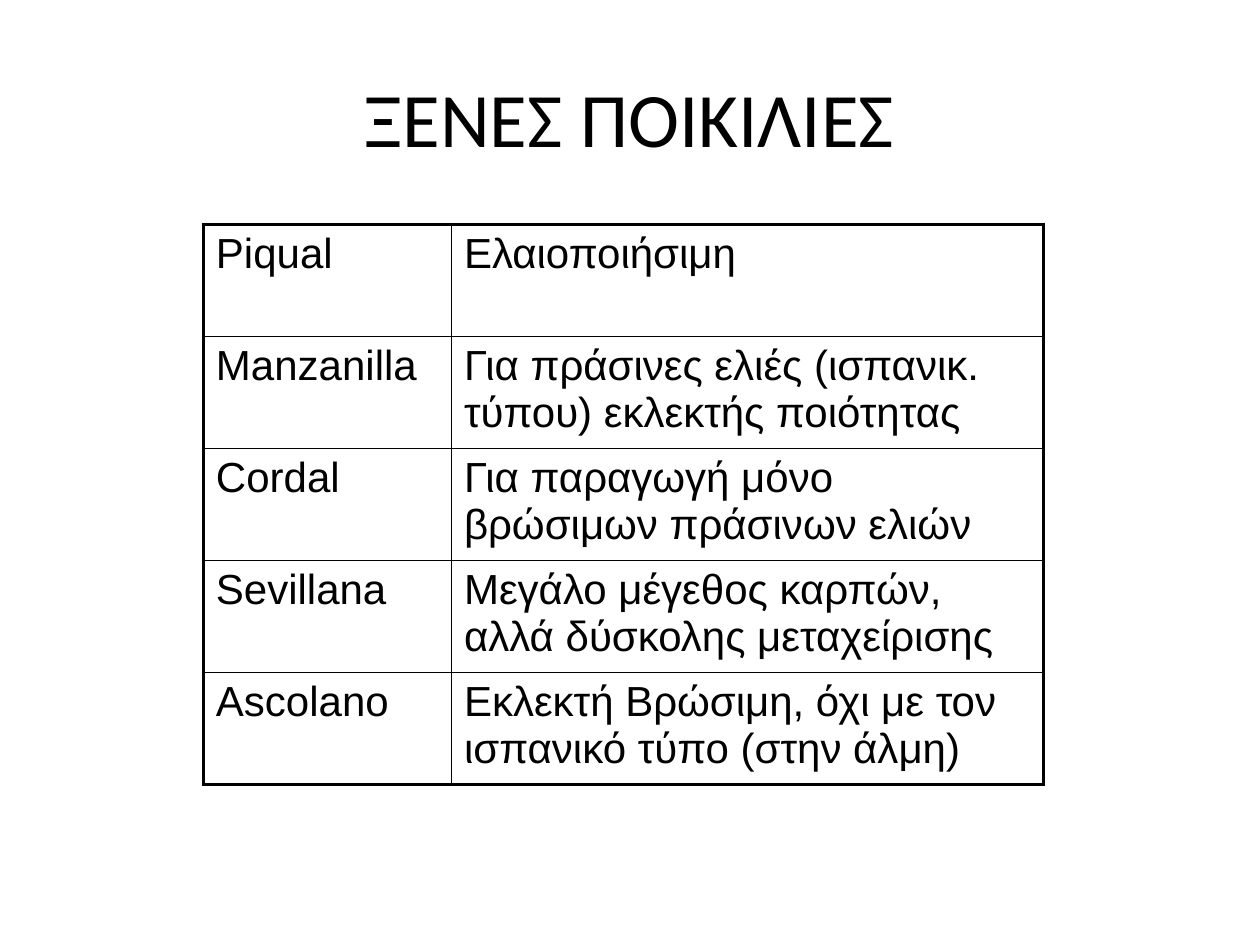
from lxml.etree import SubElement
from pptx import Presentation
from pptx.dml.color import RGBColor
from pptx.enum.text import MSO_ANCHOR, PP_ALIGN
from pptx.oxml.ns import qn
from pptx.util import Cm, Pt

TITLE = "ΞΕΝΕΣ ΠΟΙΚΙΛΙΕΣ"
VARIETIES = [
    ("Piqual", "Ελαιοποιήσιμη"),
    ("Manzanilla", "Για πράσινες ελιές (ισπανικ. τύπου) εκλεκτής ποιότητας"),
    ("Cordal", "Για παραγωγή μόνο βρώσιμων πράσινων ελιών"),
    ("Sevillana", "Μεγάλο μέγεθος καρπών, αλλά δύσκολης μεταχείρισης"),
    ("Ascolano", "Εκλεκτή Βρώσιμη, όχι με τον ισπανικό τύπο (στην άλμη)"),
]

COLORS = {"ink": "000000", "paper": "FFFFFF"}
TITLE_FONT = {"name": "Calibri", "size": Pt(44), "bold": False}
CELL_FONT = {"name": "Arial", "size": Pt(24), "bold": False}
OUTER, INNER = Pt(2.25), Pt(1)
COLUMN_WIDTHS = [Cm(5), Cm(11.94)]
ROW_HEIGHT = Cm(2.26)


def format_font(font, values):
    for name, value in values.items():
        setattr(font, name, value)
    font.color.rgb = RGBColor.from_string(COLORS["ink"])


def add_borders(cell, widths):
    """Draw the cell's sides; widths maps L, R, T and B, in that order."""
    properties = cell._tc.get_or_add_tcPr()
    for side, width in widths.items():
        line = SubElement(properties, qn(f"a:ln{side}"), w=str(width))
        fill = SubElement(line, qn("a:solidFill"))
        SubElement(fill, qn("a:srgbClr"), val=COLORS["ink"])


def add_title(slide):
    title = slide.shapes.title
    title.left, title.top, title.width, title.height = Cm(1.27), Cm(0.76), Cm(22.86), Cm(3.18)
    title.text_frame.text = TITLE
    title.text_frame.vertical_anchor = MSO_ANCHOR.MIDDLE
    paragraph = title.text_frame.paragraphs[0]
    paragraph.alignment = PP_ALIGN.CENTER
    format_font(paragraph.runs[0].font, TITLE_FONT)


def add_varieties(slide):
    rows, columns = len(VARIETIES), len(COLUMN_WIDTHS)
    table = slide.shapes.add_table(
        rows, columns, Cm(4.1), Cm(4.52), sum(COLUMN_WIDTHS), ROW_HEIGHT * rows
    ).table
    table.first_row = table.horz_banding = False
    for column, width in zip(table.columns, COLUMN_WIDTHS):
        column.width = width
    for r, variety in enumerate(VARIETIES):
        table.rows[r].height = ROW_HEIGHT
        for c, wording in enumerate(variety):
            cell = table.cell(r, c)
            cell.text = wording
            format_font(cell.text_frame.paragraphs[0].runs[0].font, CELL_FONT)
            on_edge = {"L": c == 0, "R": c == columns - 1, "T": r == 0, "B": r == rows - 1}
            add_borders(cell, {side: OUTER if edge else INNER for side, edge in on_edge.items()})
            cell.fill.solid()
            cell.fill.fore_color.rgb = RGBColor.from_string(COLORS["paper"])


def main():
    presentation = Presentation()
    presentation.slide_width, presentation.slide_height = Cm(25.4), Cm(19.05)
    slide = presentation.slides.add_slide(presentation.slide_layouts[5])
    add_title(slide)
    add_varieties(slide)
    presentation.save("out.pptx")


if __name__ == "__main__":
    main()
